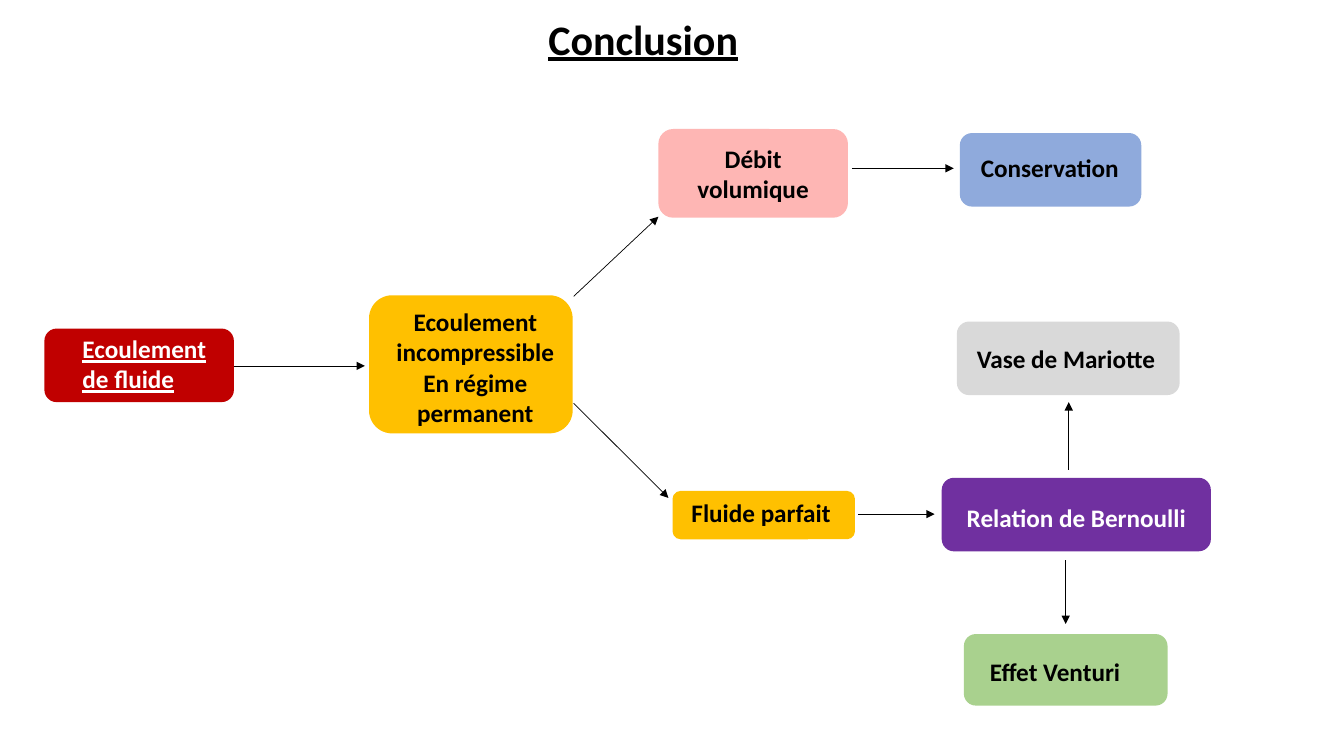
"""Builds the concluding concept map on fluid flow."""
from lxml import etree
from pptx import Presentation
from pptx import util as u
from pptx.dml.color import RGBColor
from pptx.enum import shapes, text
from pptx.oxml import ns

BLACK = RGBColor(0x00, 0x00, 0x00)
WHITE = RGBColor(0xFF, 0xFF, 0xFF)
RED = RGBColor(0xC0, 0x00, 0x00)
AMBER = RGBColor(0xFF, 0xC0, 0x00)
PINK = RGBColor(0xFE, 0xB6, 0xB4)
BLUE = RGBColor(0x8F, 0xAA, 0xDC)
GREY = RGBColor(0xD9, 0xD9, 0xD9)
PURPLE = RGBColor(0x70, 0x30, 0xA0)
GREEN = RGBColor(0xA9, 0xD1, 0x8E)


class ConceptMap:
    """Holds the style and the page on which the map is drawn."""

    font = "Calibri"
    size = 18
    line_width = 0.5

    def __init__(self, page):
        """Keep the page that receives the elements."""
        self.page = page

    def label(self, wording, at, *, size=None, color=BLACK, underline=None, centered=False):
        """Add bold text, one paragraph per line of wording."""
        box = self.page.shapes.add_textbox(*map(u.Inches, at))
        frame = box.text_frame
        frame.word_wrap = True
        frame.auto_size = text.MSO_AUTO_SIZE.SHAPE_TO_FIT_TEXT
        for index, line in enumerate(wording.split("\n")):
            para = frame.add_paragraph() if index else frame.paragraphs[0]
            if centered:
                para.alignment = text.PP_ALIGN.CENTER
            span = para.add_run()
            span.text = line
            span.font.name = self.font
            span.font.size = u.Pt(size or self.size)
            span.font.bold = True
            span.font.underline = underline
            span.font.color.rgb = color

    def node(self, wording, fill, at, label_at, **style):
        """Add a rounded block with its label."""
        block = self.page.shapes.add_shape(
            shapes.MSO_SHAPE.ROUNDED_RECTANGLE, *map(u.Inches, at))
        block.shadow.inherit = False
        block.fill.solid()
        block.fill.fore_color.rgb = fill
        block.line.fill.background()
        self.label(wording, label_at, **style)

    def arrow(self, start, end):
        """Add a thin line with a triangular head at its end."""
        line = self.page.shapes.add_connector(
            shapes.MSO_CONNECTOR.STRAIGHT, *map(u.Inches, start + end))
        line.line.color.rgb = BLACK
        line.line.width = u.Pt(self.line_width)
        etree.SubElement(line.line._get_or_add_ln(), ns.qn("a:tailEnd"), type="triangle")
        etree.SubElement(line._element.spPr, ns.qn("a:effectLst"))


def main():
    """Build the deck and save it."""
    deck = Presentation()
    deck.slide_width, deck.slide_height = u.Inches(13.33), u.Inches(7.5)
    concept_map = ConceptMap(deck.slides.add_slide(deck.slide_layouts[6]))

    concept_map.label("Conclusion", (5.34, 0.08, 4.12, 0.61), size=30, underline=True)

    concept_map.node("Ecoulement de fluide", RED, (0.44, 3.26, 1.88, 0.73),
                     (0.72, 3.26, 1.6, 0.71), color=WHITE, underline=True)
    concept_map.node("Ecoulement incompressible\nEn régime permanent", AMBER,
                     (3.66, 2.93, 2.02, 1.37), (3.61, 2.99, 2.21, 1.31), centered=True)
    concept_map.node("Débit volumique", PINK, (6.53, 1.28, 1.88, 0.88),
                     (6.77, 1.37, 1.4, 0.71), centered=True)
    concept_map.node("Conservation", BLUE, (9.52, 1.32, 1.8, 0.73), (9.63, 1.46, 1.73, 0.4))
    concept_map.node("Fluide parfait", AMBER, (6.67, 4.87, 1.81, 0.48), (6.76, 4.88, 2.21, 0.4))
    concept_map.node("Relation de Bernoulli", PURPLE, (9.34, 4.74, 2.67, 0.73),
                     (9.49, 4.93, 2.97, 0.4), color=WHITE)
    concept_map.node("Vase de Mariotte", GREY, (9.49, 3.19, 2.21, 0.73), (9.59, 3.36, 2.02, 0.4))
    concept_map.node("Effet Venturi", GREEN, (9.56, 6.29, 2.02, 0.71), (9.72, 6.46, 1.98, 0.4))

    for start, end in (
        ((2.32, 3.63), (3.62, 3.63)),
        ((5.69, 2.94), (6.53, 2.15)),
        ((5.69, 4), (6.63, 4.94)),
        ((8.45, 1.67), (9.46, 1.67)),
        ((8.51, 5.1), (9.27, 5.1)),
        ((10.6, 4.66), (10.6, 3.99)),
        ((10.57, 5.56), (10.57, 6.19)),
    ):
        concept_map.arrow(start, end)

    deck.save("out.pptx")


if __name__ == "__main__":
    main()
